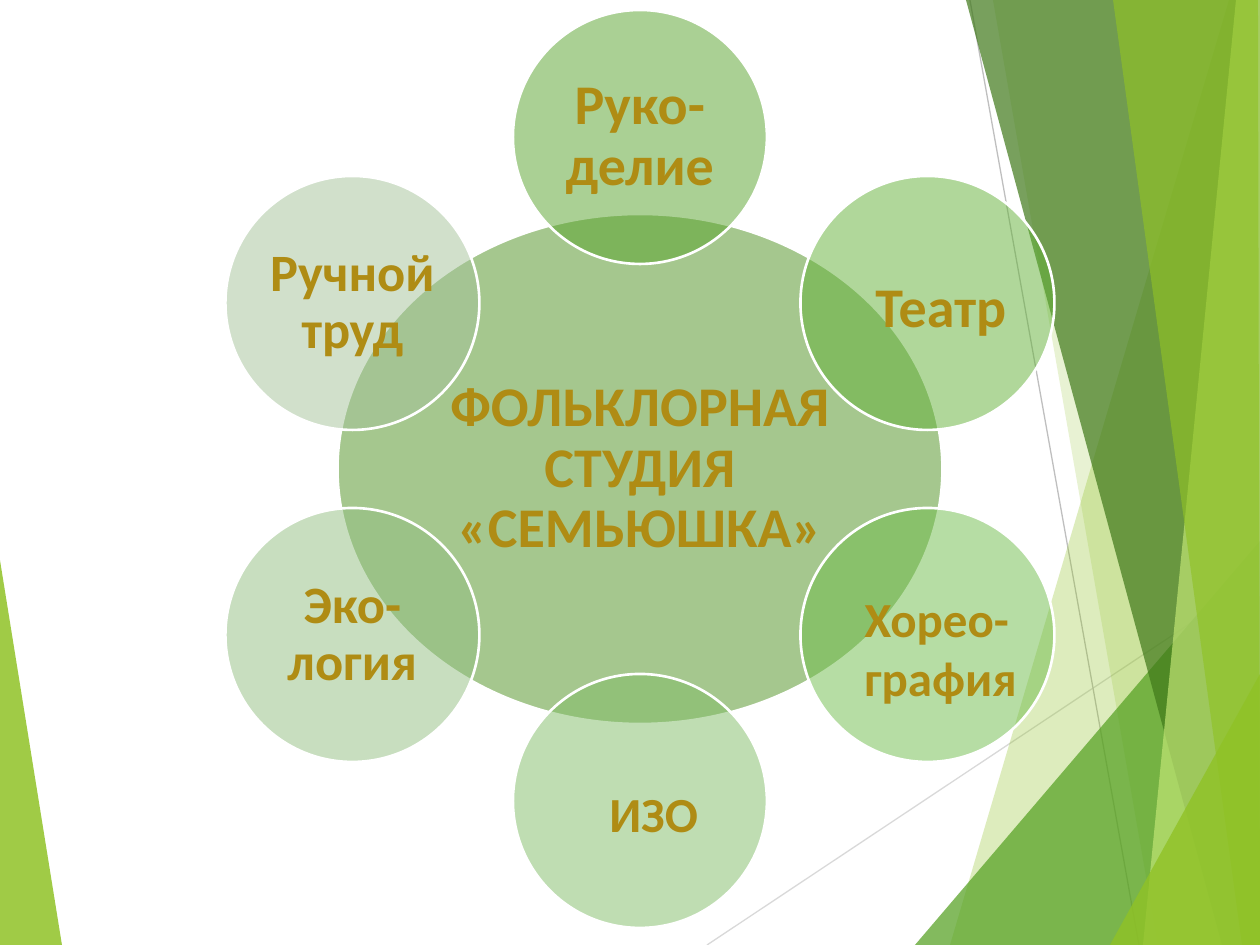
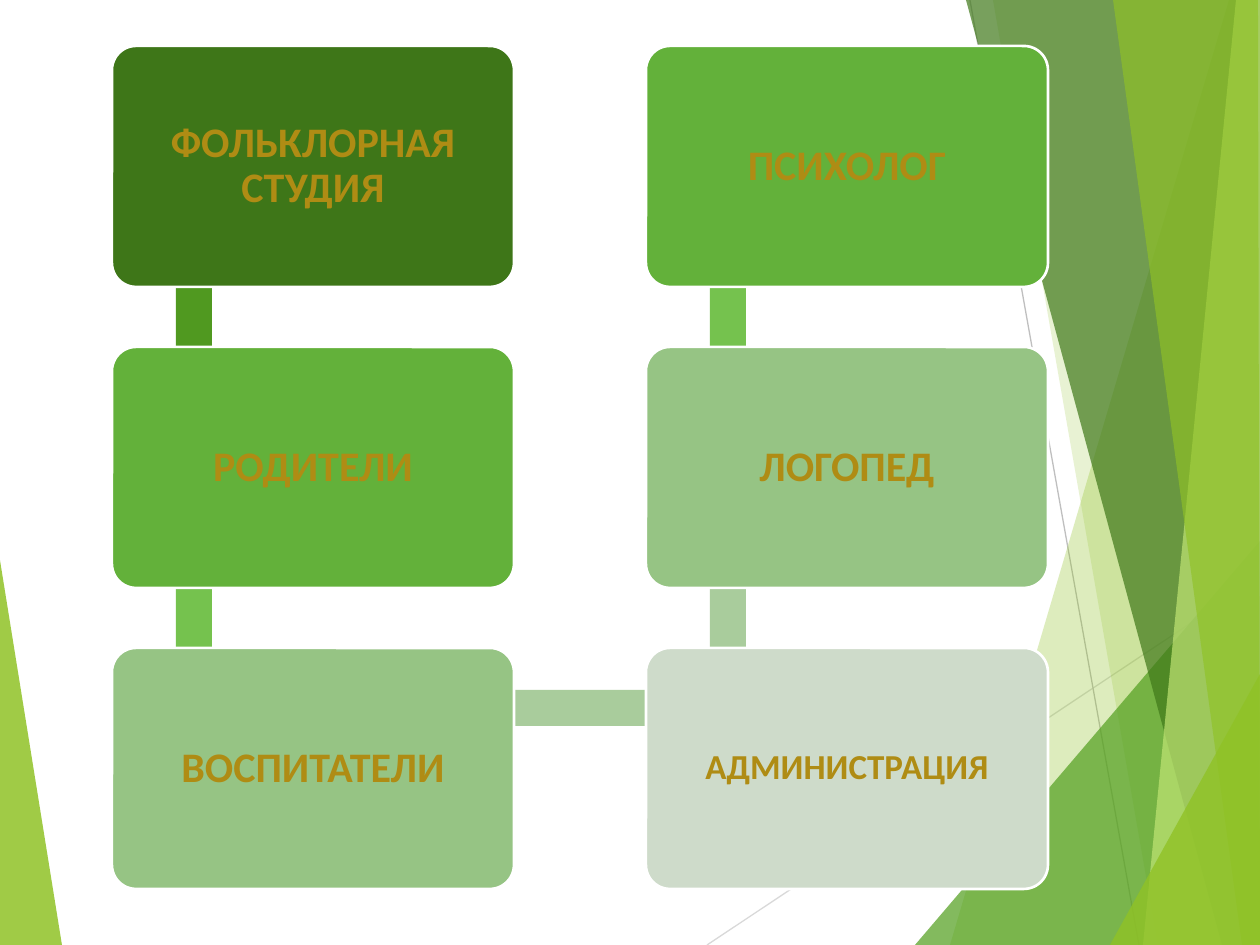
from dataclasses import dataclass
from itertools import pairwise
from math import cos, radians, sin

from lxml.etree import SubElement
from pptx import Presentation
from pptx.dml.color import RGBColor
from pptx.enum.shapes import MSO_CONNECTOR as Connector, MSO_SHAPE as Shape
from pptx.enum.text import MSO_ANCHOR as Anchor, MSO_AUTO_SIZE as AutoSize, PP_ALIGN as Align
from pptx.oxml.ns import qn
from pptx.util import Pt

PX = 914400 / 126
WIDTH, HEIGHT = 1260, 945


@dataclass(frozen=True)
class Theme:
    font: str = "Calibri"
    text: str = "AF8C14"
    outline: str = "FFFFFF"
    lime: str = "90C226"
    pale_lime: str = "C0E474"
    green: str = "54A021"
    dark_green: str = "3F7819"
    outline_width: float = 1.5
    hairline: float = 0.75
    huge: int = 32
    large: int = 30
    medium: int = 28
    card: int = 24
    small_card: int = 20


THEME = Theme()

# Corner points, colour, opacity in percent
FACETS = [
    ([(0, 560), (62, 945), (0, 945)], THEME.lime, 85),
    ([(1229, 0), (950, 945), (1260, 945), (1260, 0)], THEME.lime, 30),
    ([(993, 0), (1158, 945), (1260, 945), (1260, 0)], THEME.lime, 20),
    ([(915, 945), (1260, 541), (1260, 945)], THEME.green, 72),
    ([(966, 0), (1222, 945), (1260, 945), (1260, 0)], THEME.dark_green, 70),
    ([(1236, 0), (1143, 945), (1260, 945), (1260, 0)], THEME.pale_lime, 70),
    ([(1113, 0), (1242, 945), (1260, 945), (1258, 0)], THEME.lime, 65),
    ([(1110, 945), (1260, 674), (1260, 945)], THEME.lime, 80),
]
RAYS = [(707, 945, 1260, 577, "D9D9D9"), (970, 0, 1139, 945, "BFBFBF")]

HUB_X, HUB_Y = 640, 469
ORBIT, PETAL = 332, 254
# Clockwise from the top: colour, label, type size
PETALS = [
    ("57A22A", "Руко-делие", THEME.huge),
    ("62B137", "", THEME.huge),
    ("6FBC4A", "", THEME.medium),
    ("80BC66", "", THEME.medium),
    ("92BF81", "Эко-логия", THEME.large),
    ("A4C399", "Ручной труд", THEME.large),
]
FREE_LABELS = [
    ((863, 265, 158, 81), ["Театр"], THEME.huge),
    ((852, 582, 180, 131), ["Хорео-", "графия"], THEME.medium),
    ((597, 777, 115, 72), ["ИЗО"], THEME.medium),
]

CARD_W, CARD_H = 402, 241
CARD_LEFT, CARD_TOP = 112, 46
COLUMN_STEP, ROW_STEP = 534, 301
JOINT_X, JOINT_Y, LINK_THICKNESS = 82, 60, 36
# Chain order: column, row, colour, label, type size
CARDS = [
    (0, 0, "3E7618", "ФОЛЬКЛОРНАЯ СТУДИЯ", THEME.card),
    (0, 1, "63B13A", "РОДИТЕЛИ", THEME.card),
    (0, 2, "96C484", "ВОСПИТАТЕЛИ", THEME.card),
    (1, 2, "CEDBCA", "АДМИНИСТРАЦИЯ", THEME.small_card),
    (1, 1, "96C484", "ЛОГОПЕД", THEME.card),
    (1, 0, "63B13A", "ПСИХОЛОГ", THEME.card),
]
LINK_COLOURS = ["509920", "75C24E", "A9CC9C", "A9CC9C", "75C24E"]


def emu(*lengths):
    return [round(length * PX) for length in lengths]


def set_values(target, values):
    for name, value in values.items():
        setattr(target, name, value)


def paint(shape, colour, opacity=100, outlined=False):
    shape.shadow.inherit = False
    shape.fill.solid()
    shape.fill.fore_color.rgb = RGBColor.from_string(colour)
    if opacity < 100:
        tint = shape.fill._xPr.find(qn("a:solidFill"))[0]
        SubElement(tint, qn("a:alpha"), val=str(opacity * 1000))
    if outlined:
        shape.line.color.rgb = RGBColor.from_string(THEME.outline)
        shape.line.width = Pt(THEME.outline_width)
    else:
        shape.line.fill.background()


def style_font(paragraph, size):
    set_values(paragraph.font, {"name": THEME.font, "size": Pt(size), "bold": True})
    paragraph.font.color.rgb = RGBColor.from_string(THEME.text)


def write_centred(shape, label, size, inset):
    frame = shape.text_frame
    margins = [f"margin_{side}" for side in ("left", "top", "right", "bottom")]
    set_values(frame, dict.fromkeys(margins, emu(inset)[0]))
    set_values(frame, {"word_wrap": True, "vertical_anchor": Anchor.MIDDLE})
    paragraph = frame.paragraphs[0]
    paragraph.text = label
    set_values(paragraph, {"alignment": Align.CENTER, "line_spacing": 0.9})
    style_font(paragraph, size)


def add_free_label(slide, box, lines, size):
    frame = slide.shapes.add_textbox(*emu(*box)).text_frame
    set_values(frame, {"word_wrap": False, "auto_size": AutoSize.SHAPE_TO_FIT_TEXT})
    frame.text = "\n".join(lines)
    for paragraph in frame.paragraphs:
        style_font(paragraph, size)


def add_ray(slide, x1, y1, x2, y2, colour):
    ray = slide.shapes.add_connector(Connector.STRAIGHT, *emu(x1, y1, x2, y2))
    ray.line.color.rgb = RGBColor.from_string(colour)
    ray.line.width = Pt(THEME.hairline)
    SubElement(ray._element.spPr, qn("a:effectLst"))


def add_facet(slide, corners, colour, opacity):
    outline = slide.shapes.build_freeform(*corners[0], scale=PX)
    outline.add_line_segments(corners[1:], close=True)
    paint(outline.convert_to_shape(), colour, opacity)


def add_faceted_slide(deck):
    """Add a blank slide with the green facets and rays all slides share."""
    slide = deck.slides.add_slide(deck.slide_layouts[6])
    left_facet, *right_facets = FACETS
    add_facet(slide, *left_facet)
    for ray in RAYS:
        add_ray(slide, *ray)
    for facet in right_facets:
        add_facet(slide, *facet)
    return slide


def add_disc(slide, x, y, width, height, colour, label, size):
    """Add a translucent ellipse centred on x, y."""
    box = emu(x - width / 2, y - height / 2, width, height)
    disc = slide.shapes.add_shape(Shape.OVAL, *box)
    paint(disc, colour, opacity=50, outlined=True)
    if label:
        write_centred(disc, label, size, inset=5)


def card_corner(column, row):
    return CARD_LEFT + column * COLUMN_STEP, CARD_TOP + row * ROW_STEP


def add_card(slide, column, row, colour, label, size):
    box = emu(*card_corner(column, row), CARD_W, CARD_H)
    card = slide.shapes.add_shape(Shape.ROUNDED_RECTANGLE, *box)
    card.adjustments[0] = 0.1
    paint(card, colour, outlined=True)
    write_centred(card, label, size, inset=size // 2)


def add_link(slide, start, end, colour):
    """Add a bar between the joints of two neighbouring cards."""
    (x1, y1), (x2, y2) = sorted([card_corner(*start), card_corner(*end)])
    if x1 == x2:
        box = (x1 + JOINT_X - LINK_THICKNESS / 2, y1 + JOINT_Y, LINK_THICKNESS, y2 - y1)
    else:
        box = (x1 + JOINT_X, y1 + JOINT_Y - LINK_THICKNESS / 2, x2 - x1, LINK_THICKNESS)
    paint(slide.shapes.add_shape(Shape.RECTANGLE, *emu(*box)), colour)


def build_studio_slide(deck):
    slide = add_faceted_slide(deck)
    add_disc(slide, HUB_X, HUB_Y, 605, 510, "4C911E",
             "ФОЛЬКЛОРНАЯ СТУДИЯ «СЕМЬЮШКА»", THEME.huge)
    for position, petal in enumerate(PETALS):
        angle = radians(position * 360 / len(PETALS))
        x, y = HUB_X + ORBIT * sin(angle), HUB_Y - ORBIT * cos(angle)
        add_disc(slide, x, y, PETAL, PETAL, *petal)
    for label in FREE_LABELS:
        add_free_label(slide, *label)


def build_partners_slide(deck):
    slide = add_faceted_slide(deck)
    for (start, end), colour in zip(pairwise(CARDS), LINK_COLOURS):
        add_link(slide, start[:2], end[:2], colour)
    for card in CARDS:
        add_card(slide, *card)


def main():
    deck = Presentation()
    deck.slide_width, deck.slide_height = emu(WIDTH, HEIGHT)
    build_studio_slide(deck)
    build_partners_slide(deck)
    deck.save("out.pptx")


if __name__ == "__main__":
    main()
